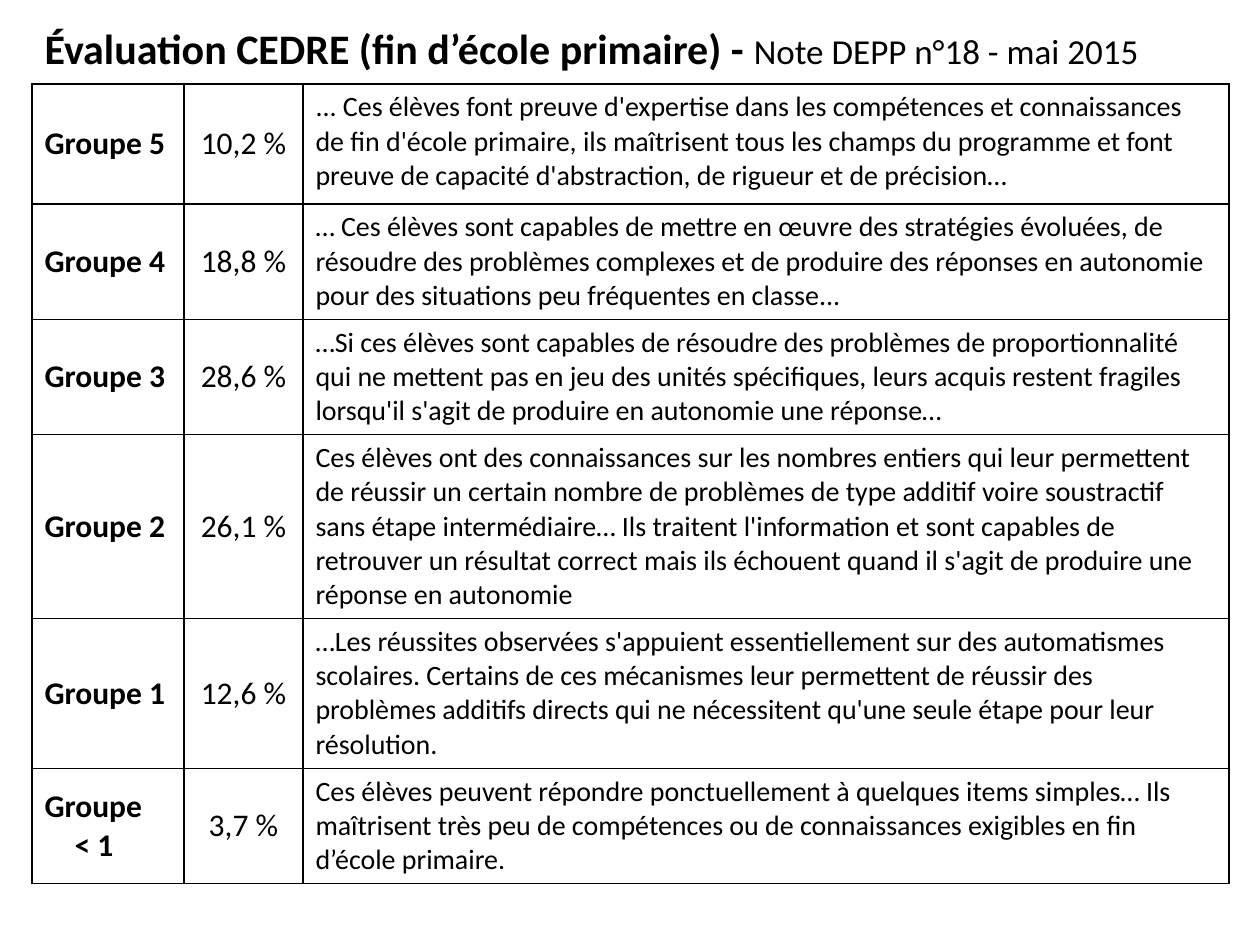
from lxml import etree
from pptx import Presentation, util as u
from pptx.dml.color import RGBColor
from pptx.enum import text
from pptx.oxml.ns import qn

# Content
HEADING = [("Évaluation CEDRE (fin d’école primaire) - ", 24, True),
           ("Note DEPP n°18 - mai 2015", 20, False)]
# Group name lines, share of pupils, description, row height in px
GROUPS = [
    (["Groupe 5"], "10,2 %",
     "... Ces élèves font preuve d'expertise dans les compétences et connaissances "
     "de fin d'école primaire, ils maîtrisent tous les champs du programme et font "
     "preuve de capacité d'abstraction, de rigueur et de précision…", 120),
    (["Groupe 4"], "18,8 %",
     "… Ces élèves sont capables de mettre en œuvre des stratégies évoluées, de "
     "résoudre des problèmes complexes et de produire des réponses en autonomie "
     "pour des situations peu fréquentes en classe...", 115),
    (["Groupe 3"], "28,6 %",
     "…Si ces élèves sont capables de résoudre des problèmes de proportionnalité "
     "qui ne mettent pas en jeu des unités spécifiques, leurs acquis restent fragiles "
     "lorsqu'il s'agit de produire en autonomie une réponse…", 115),
    (["Groupe 2"], "26,1 %",
     "Ces élèves ont des connaissances sur les nombres entiers qui leur permettent "
     "de réussir un certain nombre de problèmes de type additif voire soustractif "
     "sans étape intermédiaire… Ils traitent l'information et sont capables de "
     "retrouver un résultat correct mais ils échouent quand il s'agit de produire une "
     "réponse en autonomie", 183),
    (["Groupe 1"], "12,6 %",
     "…Les réussites observées s'appuient essentiellement sur des automatismes "
     "scolaires. Certains de ces mécanismes leur permettent de réussir des "
     "problèmes additifs directs qui ne nécessitent qu'une seule étape pour leur "
     "résolution.", 150),
    (["Groupe", "< 1"], "3,7 %",
     "Ces élèves peuvent répondre ponctuellement à quelques items simples… Ils "
     "maîtrisent très peu de compétences ou de connaissances exigibles en fin "
     "d’école primaire.", 115),
]

# Style and layout
COLORS = {"ink": "000000", "paper": "FFFFFF"}
FONT = "Calibri"
COLUMNS = [152, 119, 926]
LEFT, TABLE_TOP = 32, 84
SECOND_LINE_INDENT = 30


def px(n):
    return u.Emu(round(n * 914400 / 126))


def add_span(para, words, size, bold=False):
    span = para.add_run()
    span.text = words
    font = span.font
    font.name, font.size, font.bold = FONT, u.Pt(size), bold
    font.color.rgb = RGBColor.from_string(COLORS["ink"])


def indent(para, left):
    props = para._p.get_or_add_pPr()
    props.set("marL", str(left))
    props.set("indent", "0")
    return props


def style_cell(cell):
    props = cell._tc.get_or_add_tcPr()
    for side in ("lnL", "lnR", "lnT", "lnB"):
        line = etree.SubElement(props, qn("a:" + side), w=str(u.Pt(1)))
        fill = etree.SubElement(line, qn("a:solidFill"))
        etree.SubElement(fill, qn("a:srgbClr"), val=COLORS["ink"])
    cell.fill.solid()
    cell.fill.fore_color.rgb = RGBColor.from_string(COLORS["paper"])


def add_heading(page):
    title = page.shapes.title
    title._element.getparent().remove(title._element)
    body = page.placeholders[1]
    body.left, body.top, body.width, body.height = px(LEFT), px(16), px(1134), px(789)
    body.text_frame.auto_size = text.MSO_AUTO_SIZE.NONE
    para = body.text_frame.paragraphs[0]
    etree.SubElement(indent(para, 0), qn("a:buNone"))
    for words, size, bold in HEADING:
        add_span(para, words, size, bold)


def add_groups(page):
    heights = [group[-1] for group in GROUPS]
    table = page.shapes.add_table(len(GROUPS), len(COLUMNS), px(LEFT), px(TABLE_TOP),
                                  px(sum(COLUMNS)), px(sum(heights))).table
    table.first_row = table.horz_banding = False
    for column, width in zip(table.columns, COLUMNS):
        column.width = px(width)
    for row, (names, share, description, height) in zip(table.rows, GROUPS):
        row.height = px(height)
        name_cell, share_cell, description_cell = row.cells
        for cell in row.cells:
            style_cell(cell)
        for cell in (name_cell, share_cell):
            cell.vertical_anchor = text.MSO_ANCHOR.MIDDLE

        # Group name, one paragraph a line
        frame = name_cell.text_frame
        for i, name in enumerate(names):
            para = frame.add_paragraph() if i else frame.paragraphs[0]
            indent(para, px(SECOND_LINE_INDENT * i))
            add_span(para, name, 18, True)

        # Share and description
        para = share_cell.text_frame.paragraphs[0]
        para.alignment = text.PP_ALIGN.CENTER
        add_span(para, share, 18)
        add_span(description_cell.text_frame.paragraphs[0], description, 16)


def main():
    deck = Presentation()
    deck.slide_width, deck.slide_height = px(1260), px(945)
    page = deck.slides.add_slide(deck.slide_layouts[1])
    add_heading(page)
    add_groups(page)
    deck.save("out.pptx")


if __name__ == "__main__":
    main()
